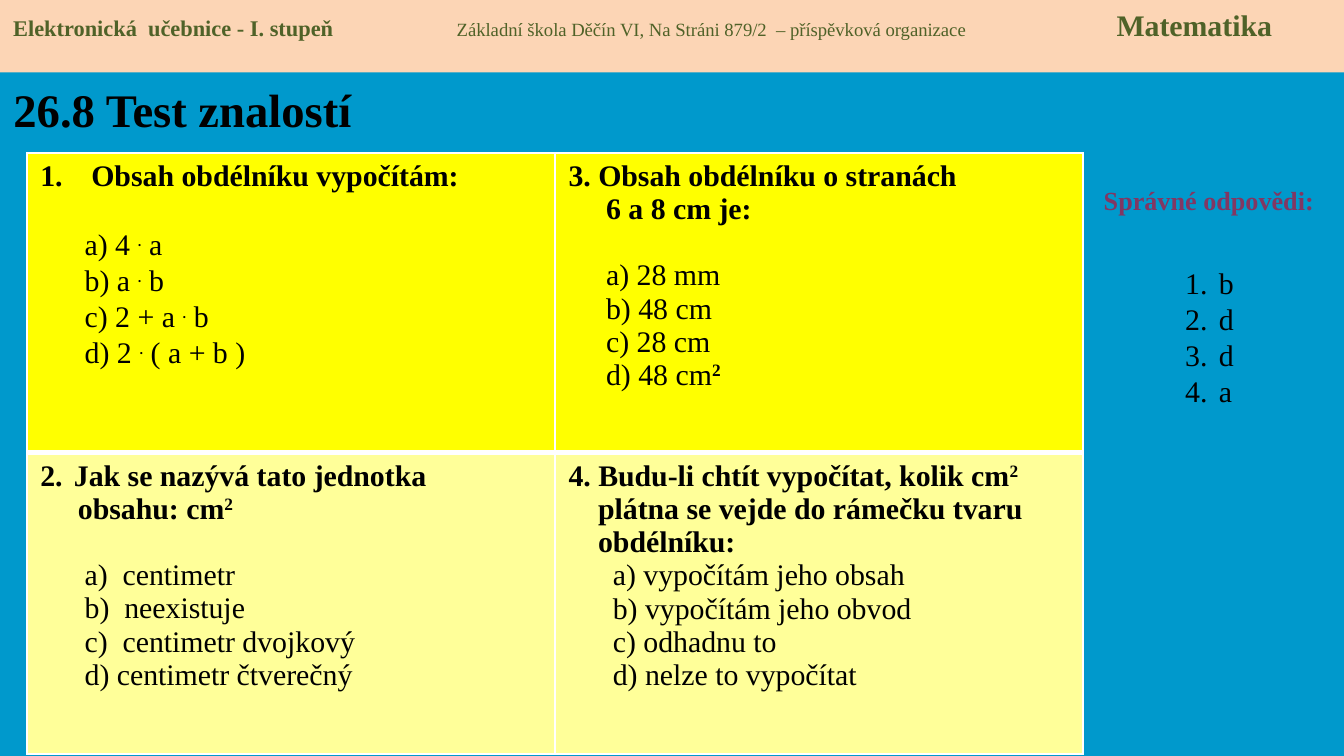
import pptx
import pptx.dml.color
import pptx.enum.shapes
import pptx.enum.text
import pptx.oxml.ns
import pptx.util
from lxml import etree
from pptx.util import Inches

FONT = "Times New Roman"
BLACK = "000000"


def color(value):
    return pptx.dml.color.RGBColor.from_string(value)


def write(paragraph, text, size, text_color=BLACK, bold=False, indent=0, hanging=0, number=None):
    """Fill a paragraph; text between ^ marks is raised, and number starts a numbered list."""
    properties = paragraph._p.get_or_add_pPr()
    properties.set("marL", str(Inches(indent)))
    properties.set("indent", str(-Inches(hanging)))
    if number:
        bullet = etree.SubElement(properties, pptx.oxml.ns.qn("a:buAutoNum"), type="arabicPeriod")
        if number > 1:
            bullet.set("startAt", str(number))
    paragraph.font.name = FONT
    paragraph.font.size = pptx.util.Pt(size)
    paragraph.font.bold = bold
    paragraph.font.color.rgb = color(text_color)
    for index, part in enumerate(text.split("^")):
        if not part:
            continue
        run = paragraph.add_run()
        run.text = part
        if index % 2:
            run.font._element.set("baseline", "30000")
            if part == ".":
                run.font.name = "Lato"
            else:
                run.font.bold = True


presentation = pptx.Presentation()
presentation.slide_width = Inches(10)
presentation.slide_height = Inches(10 * 9 / 16)
slide = presentation.slides.add_slide(presentation.slide_layouts[5])
slide.background.fill.solid()
slide.background.fill.fore_color.rgb = color("0099CC")

# Title
title = slide.shapes.title
title.left, title.top, title.width, title.height = Inches(0), Inches(0.55), Inches(2.75), Inches(0.52)
title.text_frame.word_wrap = False
title.text_frame.vertical_anchor = pptx.enum.text.MSO_ANCHOR.MIDDLE
write(title.text_frame.paragraphs[0], "26.8 Test znalostí", 25, bold=True)
title.text_frame.paragraphs[0].alignment = pptx.enum.text.PP_ALIGN.LEFT

# Header band, its three parts placed by tab stops
band = slide.shapes.add_shape(pptx.enum.shapes.MSO_SHAPE.RECTANGLE, 0, 0, Inches(10), Inches(0.54))
band.shadow.inherit = False
band.fill.solid()
band.fill.fore_color.rgb = color("FCD5B5")
band.line.fill.background()
band.text_frame.vertical_anchor = pptx.enum.text.MSO_ANCHOR.TOP
paragraph = band.text_frame.paragraphs[0]
paragraph.alignment = pptx.enum.text.PP_ALIGN.LEFT
tabs = etree.SubElement(paragraph._p.get_or_add_pPr(), pptx.oxml.ns.qn("a:tabLst"))
for position in (3.3, 8.21):
    etree.SubElement(tabs, pptx.oxml.ns.qn("a:tab"), pos=str(Inches(position)), algn="l")
paragraph.font.name = FONT
for text, size, bold in (
    ("Elektronická  učebnice - I. stupeň\t", 12, True),
    ("Základní škola Děčín VI, Na Stráni 879/2  – příspěvková organizace\t", 10, False),
    ("Matematika", 16, True),
):
    run = paragraph.add_run()
    run.text = text
    run.font.size = pptx.util.Pt(size)
    run.font.bold = bold
    run.font.color.rgb = color("4F6228")

# Questions: heading lines, list number and hanging indent, then the indents of the
# other heading lines and of the answers, the gap above the answers, and the answers
questions = [
    [
        (["Obsah obdélníku vypočítám:"], 1, 0.38, 0, 0.33, 17.7,
         ["a) 4 ^.^ a", "b) a ^.^ b", "c) 2 + a ^.^ b", "d) 2 ^.^ ( a + b )"]),
        (["3. Obsah obdélníku o stranách", "6 a 8 cm je:"], None, 0, 0.28, 0.28, 17.7,
         ["a) 28 mm", "b) 48 cm", "c) 28 cm", "d) 48 cm^2^"]),
    ],
    [
        (["Jak se nazývá tato jednotka", "obsahu: cm^2^"], 2, 0.25, 0.28, 0.33, 17.7,
         ["a)  centimetr", "b)  neexistuje", "c)  centimetr dvojkový", "d) centimetr čtverečný"]),
        (["4. Budu-li chtít vypočítat, kolik cm^2^", "plátna se vejde do rámečku tvaru", "obdélníku:"],
         None, 0, 0.22, 0.33, 0,
         ["a) vypočítám jeho obsah", "b) vypočítám jeho obvod", "c) odhadnu to", "d) nelze to vypočítat"]),
    ],
]
table = slide.shapes.add_table(2, 2, Inches(0.2), Inches(1.14), Inches(7.86), Inches(4.47)).table
table.rows[0].height = Inches(2.23)
table.rows[1].height = Inches(2.24)
for row, fill in enumerate(("FFFF00", "FFFF99")):
    for column in range(2):
        cell = table.cell(row, column)
        for side in "LRTB":
            thick = (row, side) in ((0, "B"), (1, "T"))
            line = etree.SubElement(cell._tc.get_or_add_tcPr(), pptx.oxml.ns.qn(f"a:ln{side}"),
                                    w=str(pptx.util.Pt(3 if thick else 1)))
            solid = etree.SubElement(line, pptx.oxml.ns.qn("a:solidFill"))
            etree.SubElement(solid, pptx.oxml.ns.qn("a:srgbClr"), val="FFFFFF")
        cell.fill.solid()
        cell.fill.fore_color.rgb = color(fill)

        heading, number, hanging, heading_indent, answer_indent, gap, answers = questions[row][column]
        write(cell.text_frame.paragraphs[0], heading[0], 16, bold=True,
              indent=hanging, hanging=hanging, number=number)
        for text in heading[1:]:
            write(cell.text_frame.add_paragraph(), text, 16, bold=True, indent=heading_indent)
        for index, text in enumerate(answers):
            paragraph = cell.text_frame.add_paragraph()
            if index == 0:
                paragraph.space_before = pptx.util.Pt(gap)
            write(paragraph, text, 16, indent=answer_indent)

# Correct answers
label = slide.shapes.add_textbox(Inches(8.05), Inches(1.32), Inches(1.89), Inches(0.34))
label.text_frame.word_wrap = True
write(label.text_frame.paragraphs[0], "Správné odpovědi:", 14, "813763", bold=True)
label.text_frame.paragraphs[0].alignment = pptx.enum.text.PP_ALIGN.CENTER

key = slide.shapes.add_textbox(Inches(8.72), Inches(1.65), Inches(0.55), Inches(1.99))
key.text_frame.word_wrap = True
key.text_frame.margin_top = Inches(0.32)
for index, letter in enumerate("bdda"):
    paragraph = key.text_frame.add_paragraph() if index else key.text_frame.paragraphs[0]
    paragraph.line_spacing = pptx.util.Pt(19.2)
    write(paragraph, letter, 16, indent=0.25, hanging=0.25, number=1)

presentation.save("out.pptx")
